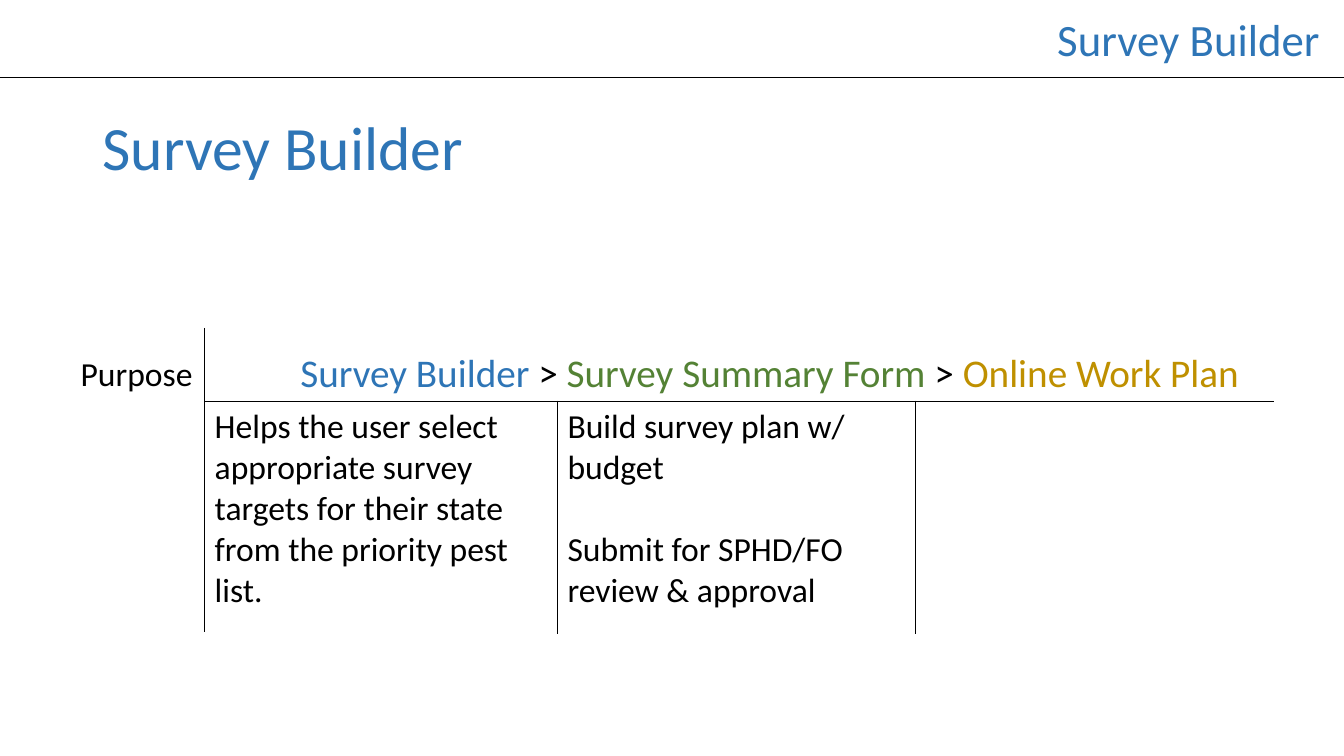
from dataclasses import dataclass

from lxml.etree import SubElement
from pptx import Presentation
from pptx.dml.color import RGBColor
from pptx.enum.shapes import MSO_CONNECTOR
from pptx.enum.text import MSO_ANCHOR, PP_ALIGN
from pptx.oxml.ns import qn
from pptx.slide import Slide
from pptx.table import Table, _Cell
from pptx.text.text import _Paragraph
from pptx.util import Pt

COLORS = {
    "blue": "2E75B6",
    "green": "548235",
    "gold": "BF9000",
    "black": "000000",
}
FONT = "Calibri"
BODY_SIZE = 24
STAGE_SIZE = 28
PARAGRAPH_GAP = 29.3
STAGE_INDENT = 51
COLUMN_WIDTHS = (95.8, 252, 255.6, 255.6)
ROW_HEIGHTS = (51.8, 165.6)


@dataclass(frozen=True)
class Heading:
    text: str
    left: float
    top: float
    width: float
    height: float
    size: float
    wrap: bool
    anchor: MSO_ANCHOR
    line_spacing: float


@dataclass(frozen=True)
class Segment:
    text: str
    color: str


@dataclass(frozen=True)
class CellBorder:
    row: int
    column: int
    sides: str


HEADINGS = (
    Heading("Survey Builder", 748.1, 5, 203, 46, 32, False, MSO_ANCHOR.TOP, 1),
    Heading("Survey Builder", 66.2, 55.4, 828, 104.4, 44, True, MSO_ANCHOR.MIDDLE, 0.9),
)
STAGES = (
    Segment("Survey Builder", "blue"),
    Segment(" > ", "black"),
    Segment("Survey Summary Form", "green"),
    Segment(" > ", "black"),
    Segment("Online Work Plan", "gold"),
)
PURPOSES = (
    ("Helps the user select appropriate survey targets for their state from the priority pest list.",),
    ("Build survey plan w/ budget", "Submit for SPHD/FO review & approval"),
)
BORDERS = (
    CellBorder(0, 0, "R"),
    CellBorder(0, 1, "LB"),
    CellBorder(0, 2, "B"),
    CellBorder(0, 3, "B"),
    CellBorder(1, 0, "R"),
    CellBorder(1, 1, "LRT"),
    CellBorder(1, 2, "LRT"),
    CellBorder(1, 3, "LT"),
)


def style_runs(paragraph: _Paragraph, size: float, color: str) -> None:
    for run in paragraph.runs:
        run.font.name = FONT
        run.font.size = Pt(size)
        run.font.color.rgb = RGBColor.from_string(COLORS[color])


def add_heading(slide: Slide, heading: Heading) -> None:
    shape = slide.shapes.add_textbox(
        Pt(heading.left), Pt(heading.top), Pt(heading.width), Pt(heading.height)
    )
    text_frame = shape.text_frame
    text_frame.text = heading.text
    text_frame.word_wrap = heading.wrap
    text_frame.vertical_anchor = heading.anchor
    paragraph = text_frame.paragraphs[0]
    paragraph.line_spacing = heading.line_spacing
    style_runs(paragraph, heading.size, "blue")


def add_header_rule(slide: Slide) -> None:
    connector = slide.shapes.add_connector(
        MSO_CONNECTOR.STRAIGHT, Pt(0), Pt(55.5), Pt(960), Pt(55.5)
    )
    connector.line.color.rgb = RGBColor.from_string(COLORS["black"])
    connector.line.width = Pt(0.5)
    SubElement(connector._element.spPr, qn("a:effectLst"))


def add_borders(cell: _Cell, sides: str) -> None:
    properties = cell._tc.get_or_add_tcPr()
    for side in sides:
        line = SubElement(properties, qn(f"a:ln{side}"), w=str(Pt(1)))
        fill = SubElement(line, qn("a:solidFill"))
        SubElement(fill, qn("a:srgbClr"), val=COLORS["black"])


def write_cell(cell: _Cell, texts: tuple[str, ...]) -> None:
    cell.text_frame.text = "\n".join(texts)
    for index, paragraph in enumerate(cell.text_frame.paragraphs):
        paragraph.space_before = Pt(PARAGRAPH_GAP if index else 0)
        style_runs(paragraph, BODY_SIZE, "black")


def write_stages(cell: _Cell) -> None:
    cell.vertical_anchor = MSO_ANCHOR.BOTTOM
    cell.margin_left = Pt(STAGE_INDENT)
    paragraph = cell.text_frame.paragraphs[0]
    paragraph.alignment = PP_ALIGN.CENTER
    paragraph.line_spacing = 0.9
    for stage in STAGES:
        run = paragraph.add_run()
        run.text = stage.text
        run.font.name = FONT
        run.font.size = Pt(STAGE_SIZE)
        run.font.color.rgb = RGBColor.from_string(COLORS[stage.color])


def add_purpose_table(slide: Slide) -> Table:
    table = slide.shapes.add_table(
        len(ROW_HEIGHTS),
        len(COLUMN_WIDTHS),
        Pt(50.4),
        Pt(234.7),
        Pt(sum(COLUMN_WIDTHS)),
        Pt(sum(ROW_HEIGHTS)),
    ).table
    table.first_row = False
    table.horz_banding = False
    for column, width in zip(table.columns, COLUMN_WIDTHS):
        column.width = Pt(width)
    for row, height in zip(table.rows, ROW_HEIGHTS):
        row.height = Pt(height)
    for border in BORDERS:
        cell = table.cell(border.row, border.column)
        add_borders(cell, border.sides)
        cell.fill.background()
    table.cell(0, 1).merge(table.cell(0, 3))
    write_cell(table.cell(0, 0), ("Purpose",))
    table.cell(0, 0).vertical_anchor = MSO_ANCHOR.BOTTOM
    write_stages(table.cell(0, 1))
    for column, texts in enumerate(PURPOSES, start=1):
        write_cell(table.cell(1, column), texts)
    return table


def main() -> None:
    presentation = Presentation()
    presentation.slide_width = Pt(960)
    presentation.slide_height = Pt(540)
    slide = presentation.slides.add_slide(presentation.slide_layouts[6])
    add_header_rule(slide)
    for heading in HEADINGS:
        add_heading(slide, heading)
    add_purpose_table(slide)
    presentation.save("out.pptx")


if __name__ == "__main__":
    main()
